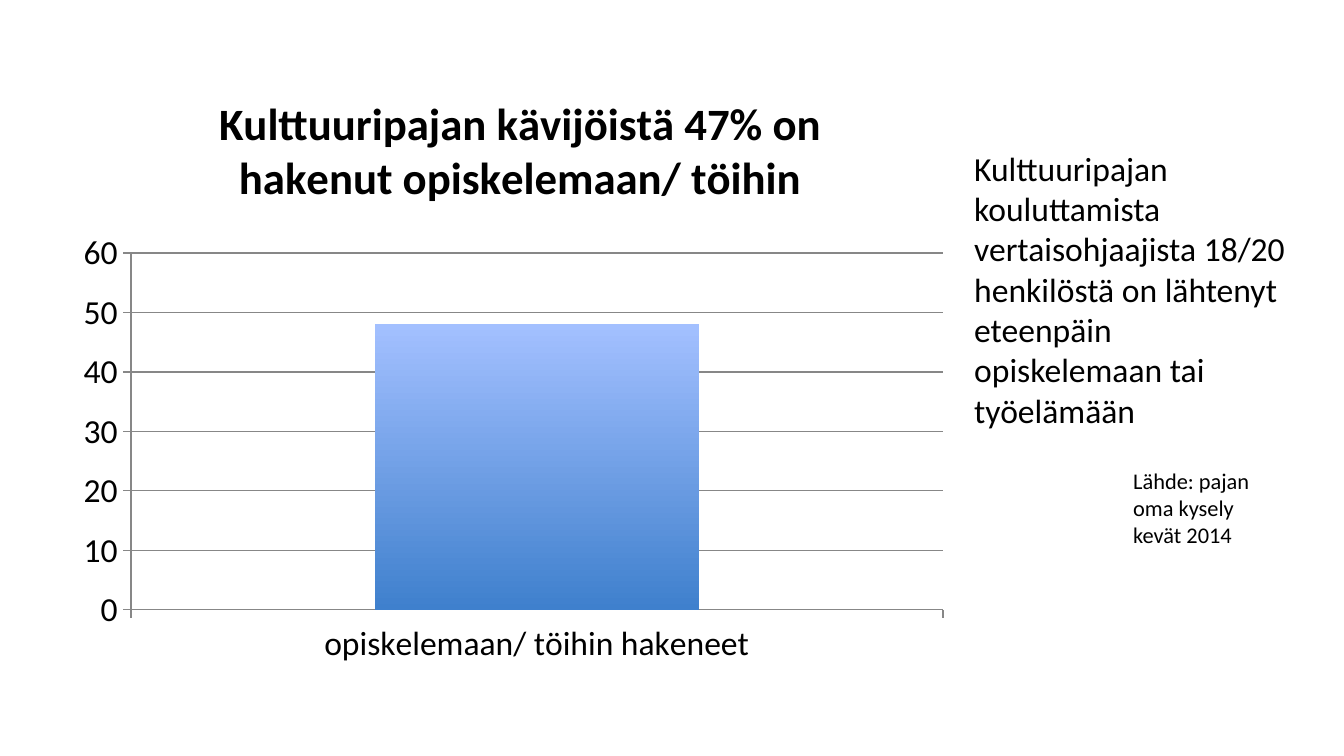
"""Build a slide with a column chart of applicants and two side notes."""
from lxml.etree import SubElement as Sub
from pptx import Presentation
from pptx.chart.data import CategoryChartData as Data
from pptx.dml.color import RGBColor as Rgb
from pptx.enum.chart import XL_CHART_TYPE as Kind, XL_TICK_MARK as Tick
from pptx.enum.text import MSO_AUTO_SIZE as Auto
from pptx.oxml.ns import qn
from pptx.util import Pt

PX = 914400 / 134.4
HUES = {"text": "000000", "line": "878787", "low": "3F80CD", "high": "A3C0FF"}


def style(font, size, bold=False):
    form = {"name": "Calibri", "size": Pt(size), "bold": bold}
    for key, val in form.items():
        setattr(font, key, val)
    font.color.rgb = Rgb.from_string(HUES["text"])


def place(node, form):
    for old in node.findall(qn("c:layout")):
        node.remove(old)
    lay = Sub(node, qn("c:layout"))
    man = Sub(lay, qn("c:manualLayout"))
    for key, val in form.items():
        Sub(man, qn("c:" + key)).set("val", str(val))
    return lay


deck = Presentation()
deck.slide_width, deck.slide_height = round(1344 * PX), round(756 * PX)
slide = deck.slides.add_slide(deck.slide_layouts[6])

data = Data()
data.categories = ["opiskelemaan/ töihin hakeneet"]
data.add_series("Series 1", [48])
wide, high = 896, 597
box = [round(n * PX) for n in (65, 79, wide, high)]
chart = slide.shapes.add_chart(Kind.COLUMN_CLUSTERED, *box, data).chart
style(chart.font, 18)
chart.has_legend = False
chart.has_title = True
title = chart.chart_title.text_frame
title.text = "Kulttuuripajan kävijöistä 47% on hakenut opiskelemaan/ töihin"
style(title.paragraphs[0].runs[0].font, 24, True)

scale = {"minimum_scale": 0, "maximum_scale": 60, "major_unit": 10}
for key, val in scale.items():
    setattr(chart.value_axis, key, val)
chart.value_axis.has_major_gridlines = True
chart.category_axis.has_major_gridlines = False
for axis in (chart.category_axis, chart.value_axis):
    axis.major_tick_mark = Tick.OUTSIDE
    axis.minor_tick_mark = Tick.NONE
    style(axis.tick_labels.font, 18)
for part in (chart.category_axis, chart.value_axis, chart.value_axis.major_gridlines):
    part.format.line.color.rgb = Rgb.from_string(HUES["line"])
    part.format.line.width = Pt(0.75)

plot = chart.plots[0]
plot.gap_width = 150
plot.vary_by_categories = False
fill = plot.series[0].format.fill
fill.gradient()
fill.gradient_angle = 90
for stop, name in zip(fill.gradient_stops, ("low", "high")):
    stop.color.rgb = Rgb.from_string(HUES[name])

root = chart.element.find(qn("c:chart"))
head = root.find(qn("c:title"))
spot = {"xMode": "edge", "yMode": "edge", "x": 146 / wide, "y": 6 / high}
head.insert(1, place(head, spot))
area = root.find(qn("c:plotArea"))
spot = {"layoutTarget": "inner", "xMode": "edge", "yMode": "edge",
        "x": 66 / wide, "y": 174 / high, "w": 812 / wide, "h": 357 / high}
area.insert(0, place(area, spot))

NOTES = [
    ((1120, 461, 153, 95), 12, "Lähde: pajan oma kysely kevät 2014"),
    ((961, 141, 353, 298), 18,
     "Kulttuuripajan kouluttamista vertaisohjaajista 18/20 henkilöstä "
     "on lähtenyt eteenpäin opiskelemaan tai työelämään"),
]
for box, size, text in NOTES:
    frame = slide.shapes.add_textbox(*[round(n * PX) for n in box]).text_frame
    for key, val in {"word_wrap": True, "auto_size": Auto.SHAPE_TO_FIT_TEXT}.items():
        setattr(frame, key, val)
    frame.text = text
    style(frame.paragraphs[0].runs[0].font, size)

deck.save("out.pptx")
